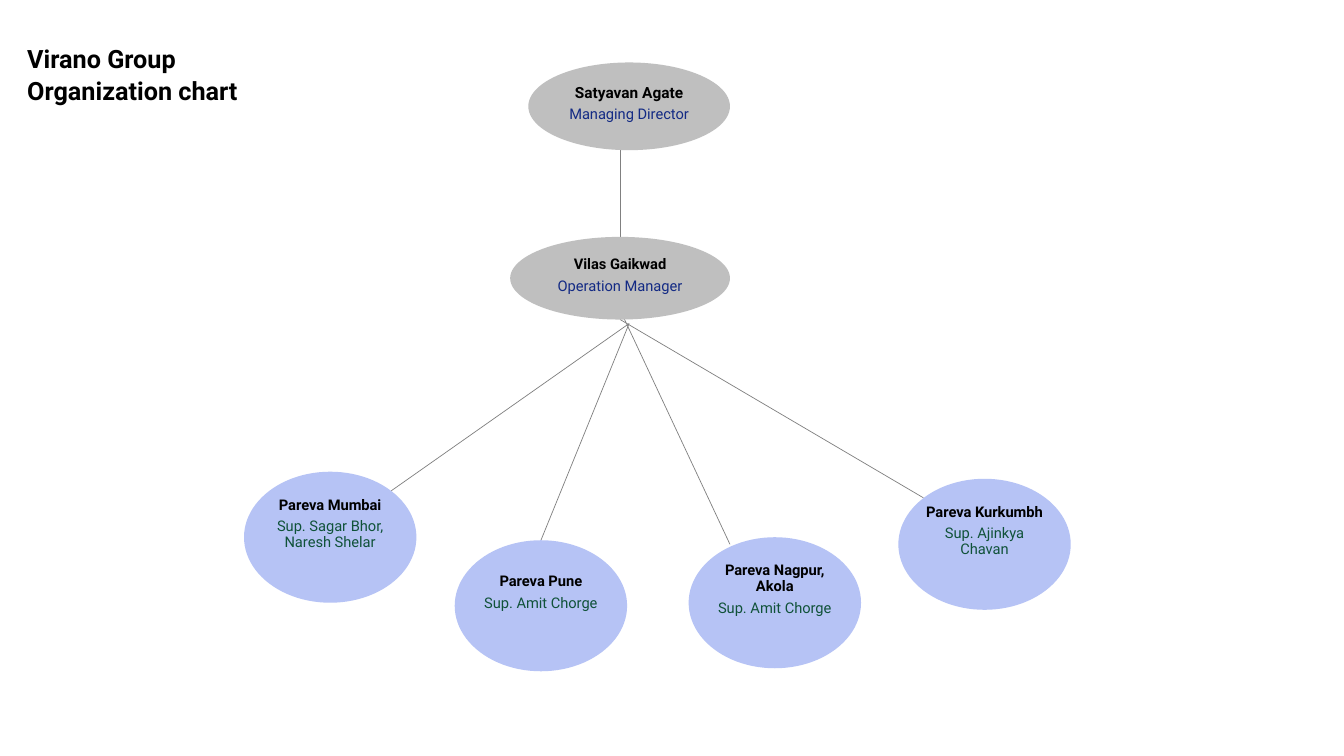
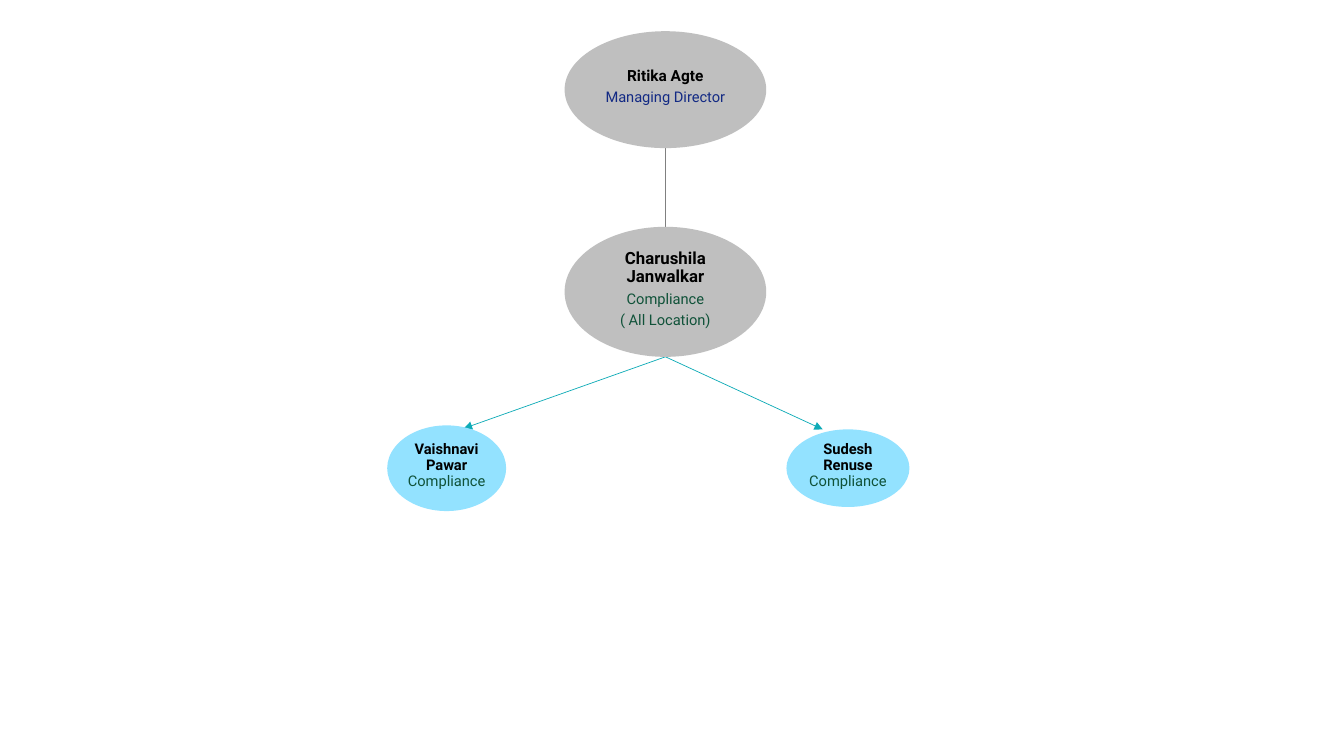
from dataclasses import dataclass
from typing import Any

import lxml.etree
import pptx
import pptx.dml.color
import pptx.enum.shapes
import pptx.enum.text
import pptx.oxml
import pptx.oxml.ns
import pptx.util

CELL = pptx.util.Inches(0.1)  # grid of 133.3 columns by 75 rows
FONT = "Roboto"
TEXT_SIZE = 10.5
COLORS = {
    "black": "000000",
    "navy": "132A84",
    "green": "105239",
    "grey": "BFBFBF",
    "periwinkle": "B6C3F5",
    "sky": "93E2FF",
    "line": "808080",
    "teal": "0EABB7",
}
Point = tuple[float, float]


@dataclass(frozen=True)
class Node:
    """An oval with a bold name and role lines; lengths in grid cells."""

    name: str
    roles: tuple[str, ...]
    column: float
    row: float
    columns: float
    rows: float
    fill: str
    role_color: str = "green"
    name_size: float = TEXT_SIZE
    bottom_inset: float = 0.6
    one_paragraph: bool = False

    def rim(self, across: float, down: float) -> Point:
        """Point at the given radii from the centre, such as (0, 1) for the bottom."""
        return (self.column + self.columns * (1 + across) / 2,
                self.row + self.rows * (1 + down) / 2)


@dataclass(frozen=True)
class Link:
    start: Point
    end: Point
    color: str = "line"
    arrow: bool = False


def cells(*lengths: float) -> list[pptx.util.Emu]:
    return [pptx.util.Emu(round(length * CELL)) for length in lengths]


def rgb(color: str) -> pptx.dml.color.RGBColor:
    return pptx.dml.color.RGBColor.from_string(COLORS[color])


def write(paragraph: Any, text: str, *, size: float = TEXT_SIZE,
          color: str = "black", bold: bool = False) -> None:
    run = paragraph.add_run()
    run.text = text
    run.font.name = FONT
    run.font.size = pptx.util.Pt(size)
    run.font.bold = bold
    run.font.color.rgb = rgb(color)


def next_paragraph(frame: Any) -> Any:
    """The still empty first paragraph, or a new one."""
    first = frame.paragraphs[0]
    return frame.add_paragraph() if first.runs else first


def draw_title(slide: Any, lines: tuple[str, ...]) -> None:
    title = slide.shapes.title
    title.left, title.top, title.width, title.height = cells(1.7, 3.8, 66.6, 7.1)
    frame = title.text_frame
    frame.word_wrap = True
    frame.auto_size = pptx.enum.text.MSO_AUTO_SIZE.NONE
    frame.vertical_anchor = pptx.enum.text.MSO_ANCHOR.TOP
    for line in lines:
        paragraph = next_paragraph(frame)
        paragraph.alignment = pptx.enum.text.PP_ALIGN.LEFT
        paragraph.space_before = pptx.util.Pt(0)
        paragraph.space_after = pptx.util.Pt(1.2)
        write(paragraph, line, size=18, bold=True)


def draw_node(slide: Any, node: Node) -> None:
    oval = slide.shapes.add_shape(
        pptx.enum.shapes.MSO_SHAPE.OVAL,
        *cells(node.column, node.row, node.columns, node.rows))
    oval.shadow.inherit = False
    oval.fill.solid()
    oval.fill.fore_color.rgb = rgb(node.fill)
    oval.line.fill.background()
    frame = oval.text_frame
    frame.word_wrap = True
    frame.vertical_anchor = pptx.enum.text.MSO_ANCHOR.MIDDLE
    (frame.margin_left, frame.margin_top, frame.margin_right,
     frame.margin_bottom) = cells(0.1, 0.1, 0.1, node.bottom_inset)
    write(frame.paragraphs[0], node.name, size=node.name_size, bold=True)
    for role in node.roles:
        if node.one_paragraph:
            write(frame.paragraphs[0], " " + role, color=node.role_color)
        else:
            write(next_paragraph(frame), role, color=node.role_color)
    for paragraph in frame.paragraphs:
        paragraph.alignment = pptx.enum.text.PP_ALIGN.CENTER
        paragraph.line_spacing = 0.9
        paragraph.space_after = pptx.util.Pt(4)


def draw_link(slide: Any, link: Link) -> None:
    connector = slide.shapes.add_connector(
        pptx.enum.shapes.MSO_CONNECTOR.STRAIGHT, *cells(*link.start, *link.end))
    connector.line.color.rgb = rgb(link.color)
    connector.line.width = pptx.util.Pt(0.5)
    if link.arrow:
        lxml.etree.SubElement(connector.line._get_or_add_ln(),
                              pptx.oxml.ns.qn("a:tailEnd"), type="triangle")
    lxml.etree.SubElement(connector._element.spPr, pptx.oxml.ns.qn("a:effectLst"))


def draw_chart(slide: Any, nodes: list[Node], links: list[Link]) -> None:
    for link in links:
        draw_link(slide, link)
    for node in nodes:
        draw_node(slide, node)


def site(name: str, supervisors: str, column: float, row: float) -> Node:
    return Node(name, (supervisors,), column, row, 17.1, 13, "periwinkle",
                bottom_inset=2.7)


def build_operations(slide: Any) -> None:
    draw_title(slide, ("Virano Group", "Organization chart"))
    director = Node("Satyavan Agate", ("Managing Director",), 52.4, 6.2, 20, 8.7,
                    "grey", "navy", name_size=11)
    manager = Node("Vilas Gaikwad", ("Operation Manager",), 50.6, 23.5, 21.8, 8.2,
                   "grey", "navy")
    mumbai = site("Pareva Mumbai", "Sup. Sagar Bhor, Naresh Shelar", 24.2, 46.8)
    pune = site("Pareva Pune", "Sup. Amit Chorge", 45.1, 53.6)
    nagpur = site("Pareva Nagpur, Akola", "Sup. Amit Chorge", 68.3, 53.3)
    kurkumbh = site("Pareva Kurkumbh", "Sup. Ajinkya Chavan", 89.1, 47.5)
    hub = (62.4, 32.1)
    diagonal = 0.71
    manager_top, manager_bottom = manager.rim(0, -1), manager.rim(0, 1)
    draw_chart(slide, [director, manager, mumbai, pune, nagpur, kurkumbh], [
        Link((manager_top[0], 13.9), manager_top),
        Link(mumbai.rim(diagonal, -diagonal), hub),
        Link(pune.rim(0, -1), hub),
        Link((61.9, 31.6), (72.4, 54)),
        Link(manager_bottom, kurkumbh.rim(-diagonal, -diagonal)),
    ])


def build_compliance(slide: Any) -> None:
    director = Node("Ritika Agte", ("Managing Director",), 56, 3.1, 20, 11.6,
                    "grey", "navy", name_size=11)
    head = Node("Charushila Janwalkar", ("Compliance", "( All Location)"),
                56, 22.5, 20, 12.9, "grey", name_size=12)
    left = Node("Vaishnavi Pawar", ("Compliance",), 38.4, 42.2, 11.8, 8.5,
                "sky", one_paragraph=True)
    right = Node("Sudesh Renuse", ("Compliance",), 78, 42.6, 12.2, 7.7,
                 "sky", one_paragraph=True)
    draw_chart(slide, [director, head, left, right], [
        Link(director.rim(0, 1), head.rim(0, -1)),
        Link(head.rim(0, 1), (46, 42.5), "teal", arrow=True),
        Link(head.rim(0, 1), (81.6, 42.6), "teal", arrow=True),
    ])


def main() -> None:
    presentation = pptx.Presentation()
    presentation.slide_width = pptx.util.Inches(13.33)
    presentation.slide_height = pptx.util.Inches(7.5)
    title_only, blank = presentation.slide_layouts[5], presentation.slide_layouts[6]
    build_operations(presentation.slides.add_slide(title_only))
    build_compliance(presentation.slides.add_slide(blank))
    presentation.save("out.pptx")


if __name__ == "__main__":
    main()
